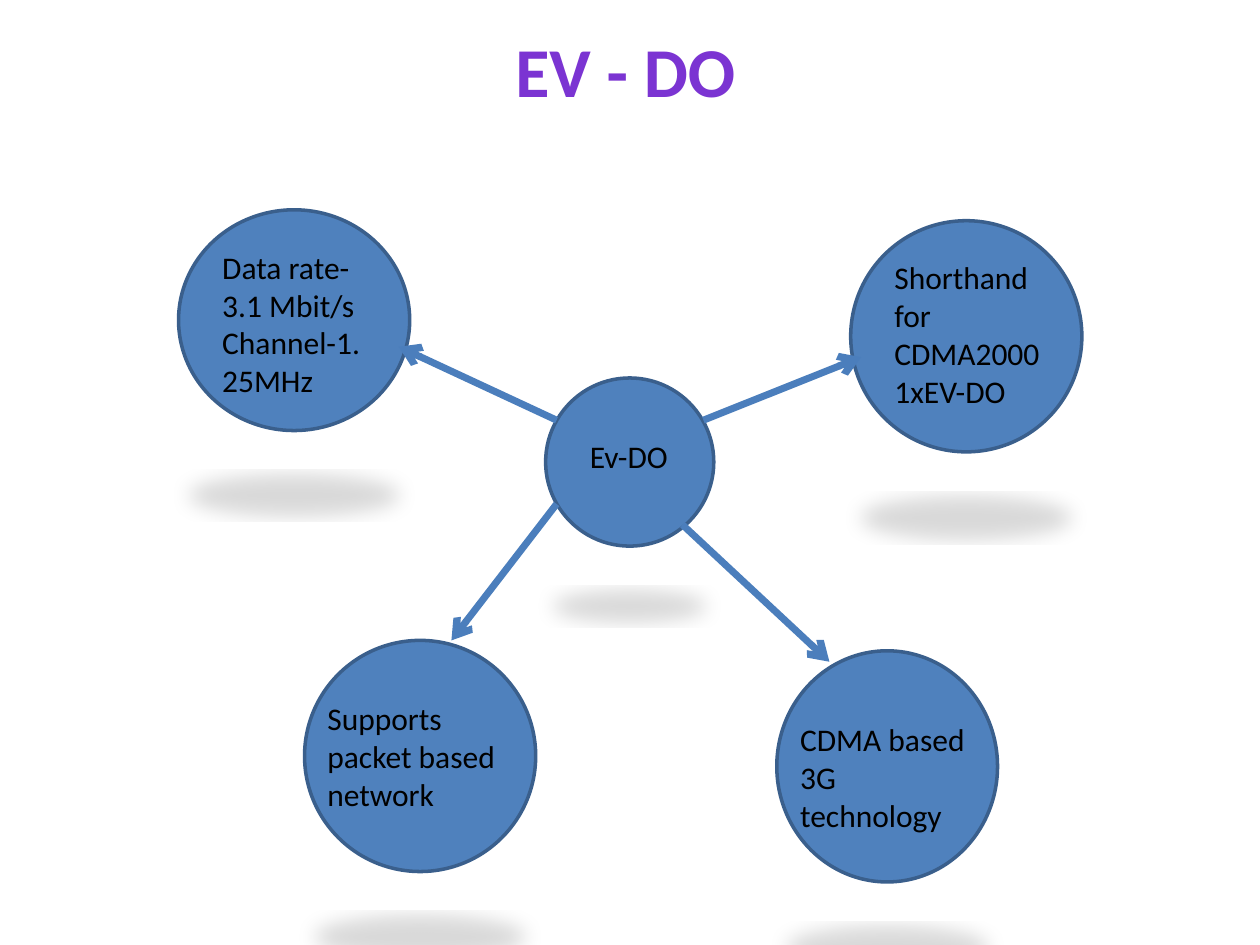
from lxml import etree
from pptx import Presentation
from pptx.dml.color import RGBColor
from pptx.enum.shapes import MSO_CONNECTOR, MSO_SHAPE
from pptx.enum.text import MSO_ANCHOR, PP_ALIGN
from pptx.oxml.ns import qn
from pptx.util import Cm, Pt

ELLIPSE = MSO_SHAPE.OVAL
STRAIGHT = MSO_CONNECTOR.STRAIGHT
CENTER = PP_ALIGN.CENTER
TOP = MSO_ANCHOR.TOP
TITLE_ONLY = 5


def color(value):
    return RGBColor.from_string(value)


class Diagram:
    font = "Calibri"
    fill = "4F81BD"
    outline = "3A5F8C"
    arrow_color = "4B7EBC"
    title_color = "7B34D2"
    text_color = "000000"

    def __init__(self, deck):
        self.page = deck.slides.add_slide(deck.slide_layouts[TITLE_ONLY])

    def style_runs(self, frame, size, hue, bold=False):
        for para in frame.paragraphs:
            for span in para.runs:
                span.font.name = self.font
                span.font.size = Pt(size)
                span.font.bold = bold
                span.font.color.rgb = color(hue)

    def title(self, text, left, top, width, height):
        box = self.page.shapes.title
        box.left, box.top, box.width, box.height = map(Cm, (left, top, width, height))
        frame = box.text_frame
        frame.text = text
        frame.vertical_anchor = TOP
        frame.paragraphs[0].alignment = CENTER
        self.style_runs(frame, 40, self.title_color, bold=True)

    def circle(self, left, top, width, height):
        shape = self.page.shapes.add_shape(ELLIPSE, *map(Cm, (left, top, width, height)))
        shape.fill.solid()
        shape.fill.fore_color.rgb = color(self.fill)
        shape.line.color.rgb = color(self.outline)
        shape.line.width = Pt(2)
        shape.shadow.inherit = False
        effects = shape._element.spPr.find(qn("a:effectLst"))
        shadow = etree.SubElement(
            effects, qn("a:outerShdw"), blurRad=str(Pt(12)), dist=str(Pt(25)),
            dir="5400000", sx="90000", sy="-19000", rotWithShape="0")
        shade = etree.SubElement(shadow, qn("a:srgbClr"), val="000000")
        etree.SubElement(shade, qn("a:alpha"), val="15000")

    def label(self, text, left, top, width, height):
        box = self.page.shapes.add_textbox(*map(Cm, (left, top, width, height)))
        frame = box.text_frame
        frame.word_wrap = True
        frame.text = text
        self.style_runs(frame, 18, self.text_color)

    def arrow(self, start_x, start_y, end_x, end_y):
        line = self.page.shapes.add_connector(
            STRAIGHT, *map(Cm, (start_x, start_y, end_x, end_y)))
        line.line.color.rgb = color(self.arrow_color)
        line.line.width = Pt(4)
        etree.SubElement(line.line._get_or_add_ln(), qn("a:tailEnd"), type="arrow")
        etree.SubElement(line._element.spPr, qn("a:effectLst"))


def main():
    deck = Presentation()
    deck.slide_width, deck.slide_height = Cm(25.4), Cm(19.05)
    diagram = Diagram(deck)
    diagram.title("EV - DO", 0.64, 0.43, 23.93, 1.96)

    topics = [
        ("Ev-DO", (11, 7.62, 3.39, 3.39), (11.64, 8.68, 2.54, 1.02)),
        ("Shorthand for CDMA2000 1xEV-DO",
         (17.15, 4.45, 4.66, 4.66), (17.78, 5.08, 3.81, 3.33)),
        ("CDMA based 3G technology",
         (15.66, 13.12, 4.45, 4.66), (15.88, 14.39, 4.02, 2.57)),
        ("Supports packet based network",
         (6.14, 12.91, 4.66, 4.66), (6.35, 13.97, 4.02, 2.57)),
        ("Data rate- 3.1 Mbit/s\nChannel-1.25MHz",
         (3.6, 4.23, 4.66, 4.45), (4.23, 4.87, 3.6, 3.33)),
    ]
    for text, circle_area, label_area in topics:
        diagram.circle(*circle_area)
        diagram.label(text, *label_area)

    arrows = [
        (14.18, 8.47, 17.36, 7.2),
        (13.76, 10.58, 16.72, 13.34),
        (11.22, 10.16, 9.1, 12.91),
        (11.22, 8.47, 8.04, 6.99),
    ]
    for ends in arrows:
        diagram.arrow(*ends)

    deck.save("out.pptx")


if __name__ == "__main__":
    main()
